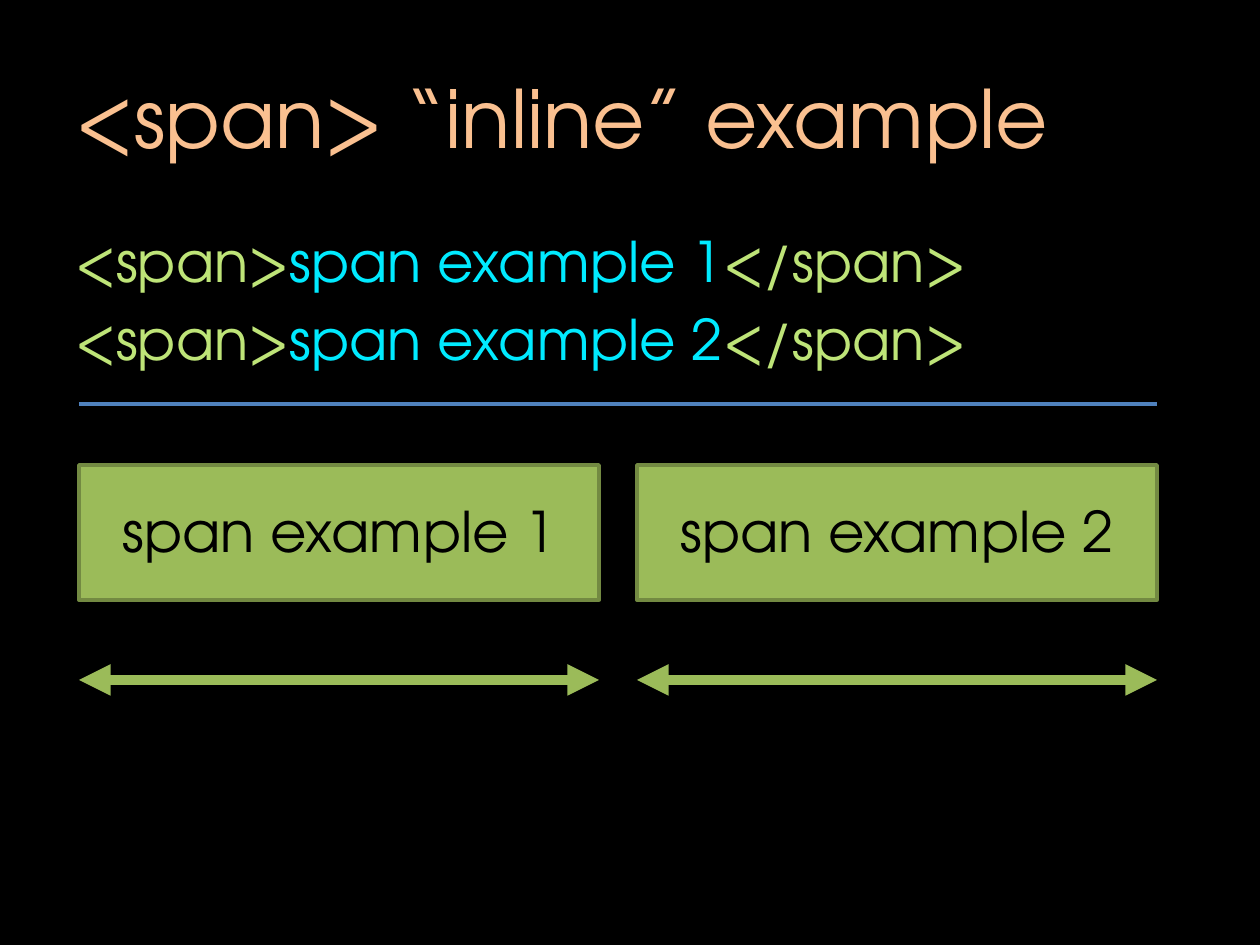
import dataclasses
import typing

import pptx
import pptx.dml.color
import pptx.enum.shapes
import pptx.enum.text
import pptx.oxml
import pptx.oxml.ns
import pptx.util

PX_PER_INCH = 126
FONT = "TeX Gyre Adventor"
COLORS = {
    "background": "000000",
    "title": "FAC090",
    "tag": "BEE478",
    "content": "00EAFF",
    "divider": "4F81BD",
    "span": "9BBB59",
    "span_edge": "738A42",
    "label": "000000",
}


@dataclasses.dataclass(frozen=True)
class Box:
    left: int
    top: int
    width: int
    height: int


@dataclasses.dataclass(frozen=True)
class SpanExample:
    text: str
    left: int


TITLE = Box(63, 38, 1134, 157)
MARKUP = Box(63, 220, 1134, 624)
SPAN_LEFT, SPAN_TOP, SPAN_WIDTH, SPAN_HEIGHT = 79, 465, 520, 135
SPAN_STEP = 558
DIVIDER_Y, ARROW_Y = 404, 680
EXAMPLES = [
    SpanExample(f"span example {number}", SPAN_LEFT + (number - 1) * SPAN_STEP)
    for number in (1, 2)
]


def px(length: int) -> pptx.util.Emu:
    return pptx.util.Emu(round(length * 914400 / PX_PER_INCH))


def color(name: str) -> pptx.dml.color.RGBColor:
    return pptx.dml.color.RGBColor.from_string(COLORS[name])


def apply(target: typing.Any, formats: dict[str, typing.Any]) -> None:
    for name, value in formats.items():
        setattr(target, name, value)


def place(shape: typing.Any, box: Box) -> None:
    apply(shape, {name: px(value) for name, value in dataclasses.asdict(box).items()})


def add_run(paragraph: typing.Any, text: str, size: int, color_name: str) -> None:
    run = paragraph.add_run()
    run.text = text
    apply(run.font, {"name": FONT, "size": pptx.util.Pt(size)})
    run.font.color.rgb = color(color_name)


def add_text_frame(slide: typing.Any, box: Box, formats: dict[str, typing.Any]) -> typing.Any:
    textbox = slide.shapes.add_textbox(*map(px, dataclasses.astuple(box)))
    apply(textbox.text_frame, formats)
    return textbox.text_frame


def add_line(
    slide: typing.Any, left: int, right: int, y: int, color_name: str, width: int,
    arrowheads: bool = False,
) -> None:
    connector = slide.shapes.add_connector(
        pptx.enum.shapes.MSO_CONNECTOR.STRAIGHT, px(left), px(y), px(right), px(y)
    )
    connector.line.color.rgb = color(color_name)
    connector.line.width = pptx.util.Pt(width)
    if arrowheads:
        outline = connector.line._get_or_add_ln()
        for end in ("a:headEnd", "a:tailEnd"):
            arrowhead = pptx.oxml.parse_xml(f"<{end} {pptx.oxml.ns.nsdecls('a')}/>")
            arrowhead.set("type", "triangle")
            outline.append(arrowhead)
    connector._element.spPr.append(
        pptx.oxml.parse_xml(f"<a:effectLst {pptx.oxml.ns.nsdecls('a')}/>")
    )


def add_title(slide: typing.Any) -> None:
    title = slide.shapes.title
    place(title, TITLE)
    apply(title.text_frame, {
        "word_wrap": True,
        "vertical_anchor": pptx.enum.text.MSO_ANCHOR.MIDDLE,
    })
    heading = title.text_frame.paragraphs[0]
    heading.alignment = pptx.enum.text.PP_ALIGN.LEFT
    add_run(heading, "<span> “inline” example", 46, "title")


def add_markup(slide: typing.Any) -> None:
    frame = add_text_frame(slide, MARKUP, {"word_wrap": True})
    for index, example in enumerate(EXAMPLES):
        line = frame.add_paragraph() if index else frame.paragraphs[0]
        line.space_before = pptx.util.Pt(6.4 if index else 0)
        add_run(line, "<span>", 32, "tag")
        add_run(line, example.text, 32, "content")
        add_run(line, "</span>", 32, "tag")


def add_span_block(slide: typing.Any, example: SpanExample) -> None:
    block = slide.shapes.add_shape(
        pptx.enum.shapes.MSO_SHAPE.RECTANGLE,
        px(example.left), px(SPAN_TOP), px(SPAN_WIDTH), px(SPAN_HEIGHT),
    )
    block.shadow.inherit = False
    block.fill.solid()
    block.fill.fore_color.rgb = color("span")
    block.line.color.rgb = color("span_edge")
    block.line.width = pptx.util.Pt(2)


def add_span_label(slide: typing.Any, example: SpanExample) -> None:
    frame = add_text_frame(slide, Box(example.left + 31, 490, 464, 81), {
        "word_wrap": False,
        "auto_size": pptx.enum.text.MSO_AUTO_SIZE.SHAPE_TO_FIT_TEXT,
    })
    add_run(frame.paragraphs[0], example.text, 32, "label")


def main() -> None:
    presentation = pptx.Presentation()
    apply(presentation, {"slide_width": px(1260), "slide_height": px(945)})
    slide = presentation.slides.add_slide(presentation.slide_layouts.get_by_name("Title Only"))
    slide.background.fill.solid()
    slide.background.fill.fore_color.rgb = color("background")

    add_title(slide)
    add_markup(slide)
    add_line(slide, SPAN_LEFT, EXAMPLES[-1].left + SPAN_WIDTH, DIVIDER_Y, "divider", 2)
    for example in EXAMPLES:
        add_span_block(slide, example)
        add_span_label(slide, example)
        add_line(slide, example.left, example.left + SPAN_WIDTH, ARROW_Y, "span", 6, True)

    presentation.save("out.pptx")


if __name__ == "__main__":
    main()
